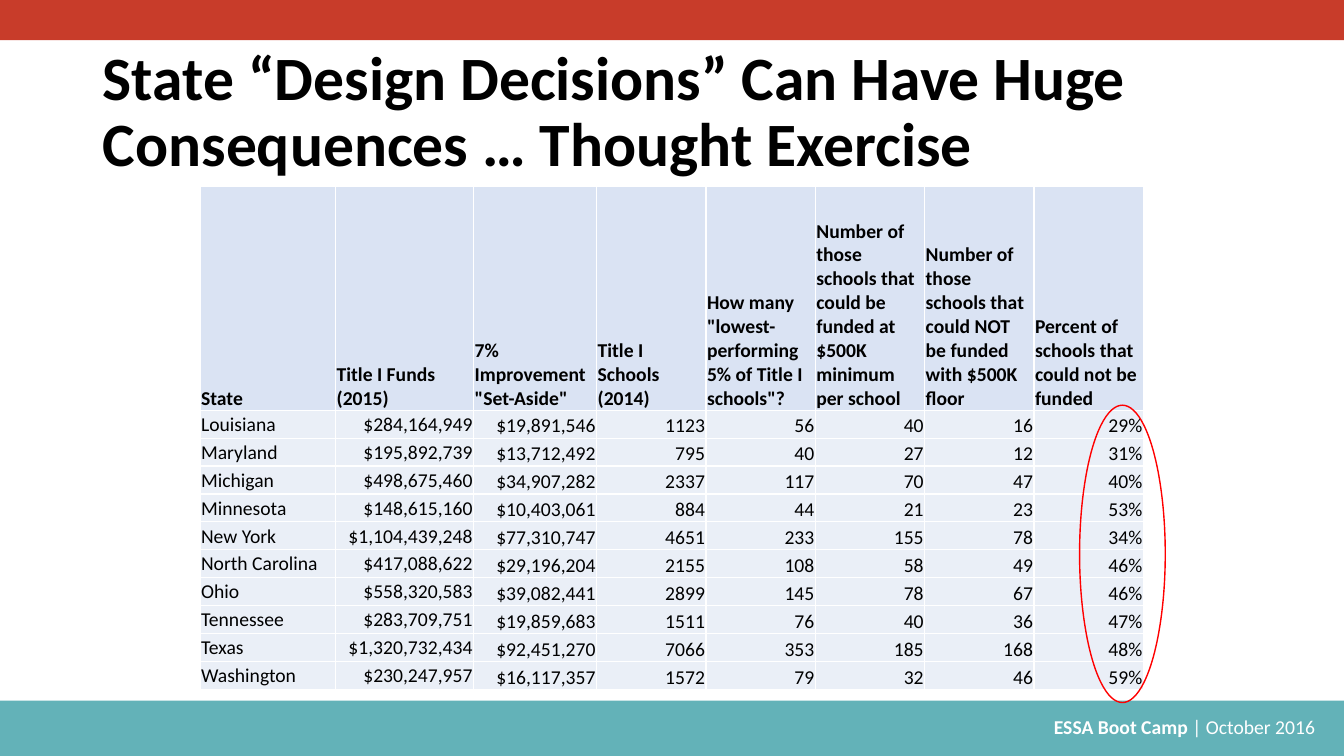
from dataclasses import dataclass

from lxml.etree import SubElement
from pptx import Presentation
from pptx.dml.color import RGBColor
from pptx.enum.shapes import MSO_SHAPE
from pptx.enum.text import MSO_ANCHOR, PP_ALIGN
from pptx.oxml import parse_xml
from pptx.oxml.ns import nsdecls, qn
from pptx.slide import Slide
from pptx.table import _Cell
from pptx.text.text import Font
from pptx.util import Inches, Pt

GRID = Inches(0.1)  # one grid column or row
WIDE, HIGH = 133.33, 75
FACE = "Calibri"
BLACK, WHITE, RED = "000000", "FFFFFF", "FF0000"
HEAD, BODY = "DAE3F3", "EAEFF7"

COLS = [13.45, 13.7, 12.2] + [10.85] * 5
ROWS = [22.2] + [2.77] * 10
STATES = [
    ("State", "Title I Funds (2015)", '7% Improvement "Set-Aside"',
     "Title I Schools (2014)",
     'How many "lowest-performing 5% of Title I schools"?',
     "Number of those schools that could be funded at $500K minimum per school",
     "Number of those schools that could NOT be funded with $500K floor",
     "Percent of schools that could not be funded"),
    ("Louisiana", "$284,164,949", "$19,891,546", "1123", "56", "40", "16", "29%"),
    ("Maryland", "$195,892,739", "$13,712,492", "795", "40", "27", "12", "31%"),
    ("Michigan", "$498,675,460", "$34,907,282", "2337", "117", "70", "47", "40%"),
    ("Minnesota", "$148,615,160", "$10,403,061", "884", "44", "21", "23", "53%"),
    ("New York", "$1,104,439,248", "$77,310,747", "4651", "233", "155", "78", "34%"),
    ("North Carolina", "$417,088,622", "$29,196,204", "2155", "108", "58", "49", "46%"),
    ("Ohio", "$558,320,583", "$39,082,441", "2899", "145", "78", "67", "46%"),
    ("Tennessee", "$283,709,751", "$19,859,683", "1511", "76", "40", "36", "47%"),
    ("Texas", "$1,320,732,434", "$92,451,270", "7066", "353", "185", "168", "48%"),
    ("Washington", "$230,247,957", "$16,117,357", "1572", "79", "32", "46", "59%"),
]


@dataclass(frozen=True)
class Box:
    """A place on the slide, in grid columns and rows."""
    left: float
    top: float
    width: float
    height: float

    def emu(self) -> tuple[int, ...]:
        return tuple(grid(n) for n in (self.left, self.top, self.width, self.height))


@dataclass(frozen=True)
class Form:
    kind: MSO_SHAPE
    box: Box
    fill: str | None = None
    line: str | None = None


BANDS = [
    Form(MSO_SHAPE.RECTANGLE, Box(0, 69.5, WIDE, 5.5), fill="63B2B8"),
    Form(MSO_SHAPE.RECTANGLE, Box(0, 0, WIDE, 4), fill="C83C2A"),
]
RING = Form(MSO_SHAPE.OVAL, Box(107.1, 40.2, 8.5, 29.5), line=RED)


def grid(count: float) -> int:
    return round(count * GRID)


def color(code: str) -> RGBColor:
    return RGBColor.from_string(code)


def style(font: Font, size: int, code: str, bold: bool) -> None:
    font.name, font.size, font.bold = FACE, Pt(size), bold
    font.color.rgb = color(code)


def draw(slide: Slide, form: Form) -> None:
    shape = slide.shapes.add_shape(form.kind, *form.box.emu())
    shape.shadow.inherit = False
    if form.fill:
        shape.fill.solid()
        shape.fill.fore_color.rgb = color(form.fill)
    else:
        shape.fill.background()
    if form.line:
        shape.line.color.rgb = color(form.line)
        shape.line.width = Pt(1)
    else:
        shape.line.fill.background()


def border(cell: _Cell, code: str) -> None:
    props = cell._tc.get_or_add_tcPr()
    for spot, side in enumerate(("lnL", "lnR", "lnT", "lnB")):
        line = parse_xml(f'<a:{side} {nsdecls("a")} w="{Pt(1)}"/>')
        fill = SubElement(line, qn("a:solidFill"))
        SubElement(fill, qn("a:srgbClr"), val=code)
        props.insert(spot, line)


def write(cell: _Cell, text: str, row: int, col: int) -> None:
    head = row == 0
    cell.text = text
    cell.margin_left = cell.margin_right = cell.margin_top = grid(0.1)
    cell.margin_bottom = 0
    middle = not head and col < 2
    cell.vertical_anchor = MSO_ANCHOR.MIDDLE if middle else MSO_ANCHOR.BOTTOM
    cell.fill.solid()
    cell.fill.fore_color.rgb = color(HEAD if head else BODY)
    border(cell, WHITE)
    para = cell.text_frame.paragraphs[0]
    para.alignment = PP_ALIGN.LEFT if head or col == 0 else PP_ALIGN.RIGHT
    style(para.runs[0].font, 14, BLACK, head)


def add_states(slide: Slide) -> None:
    box = Box(19.85, 18.5, sum(COLS), sum(ROWS))
    table = slide.shapes.add_table(len(ROWS), len(COLS), *box.emu()).table
    table.horz_banding = False
    for column, width in zip(table.columns, COLS):
        column.width = grid(width)
    for line, height in zip(table.rows, ROWS):
        line.height = grid(height)
    for row, texts in enumerate(STATES):
        for col, text in enumerate(texts):
            write(table.cell(row, col), text, row, col)


def add_title(slide: Slide) -> None:
    title = slide.shapes.title
    title.left, title.top, title.width, title.height = Box(9.2, 4, 115, 14.5).emu()
    frame = title.text_frame
    frame.text = "State “Design Decisions” Can Have Huge Consequences … Thought Exercise"
    frame.word_wrap = True
    frame.vertical_anchor = MSO_ANCHOR.MIDDLE
    para = frame.paragraphs[0]
    para.alignment, para.line_spacing = PP_ALIGN.LEFT, 0.9
    style(para.runs[0].font, 44, BLACK, True)


def add_footer(slide: Slide) -> None:
    frame = slide.shapes.add_textbox(*Box(48, 70.4, 83.9, 3.4).emu()).text_frame
    frame.word_wrap = True
    para = frame.paragraphs[0]
    para.alignment = PP_ALIGN.RIGHT
    for text, bold in (("ESSA Boot Camp ", True), ("| October 2016 ", False)):
        run = para.add_run()
        run.text = text
        style(run.font, 14, WHITE, bold)


def main() -> None:
    deck = Presentation()
    deck.slide_width, deck.slide_height = grid(WIDE), grid(HIGH)
    slide = deck.slides.add_slide(deck.slide_layouts[5])
    for band in BANDS:
        draw(slide, band)
    add_footer(slide)
    add_title(slide)
    add_states(slide)
    draw(slide, RING)
    deck.save("out.pptx")


if __name__ == "__main__":
    main()
